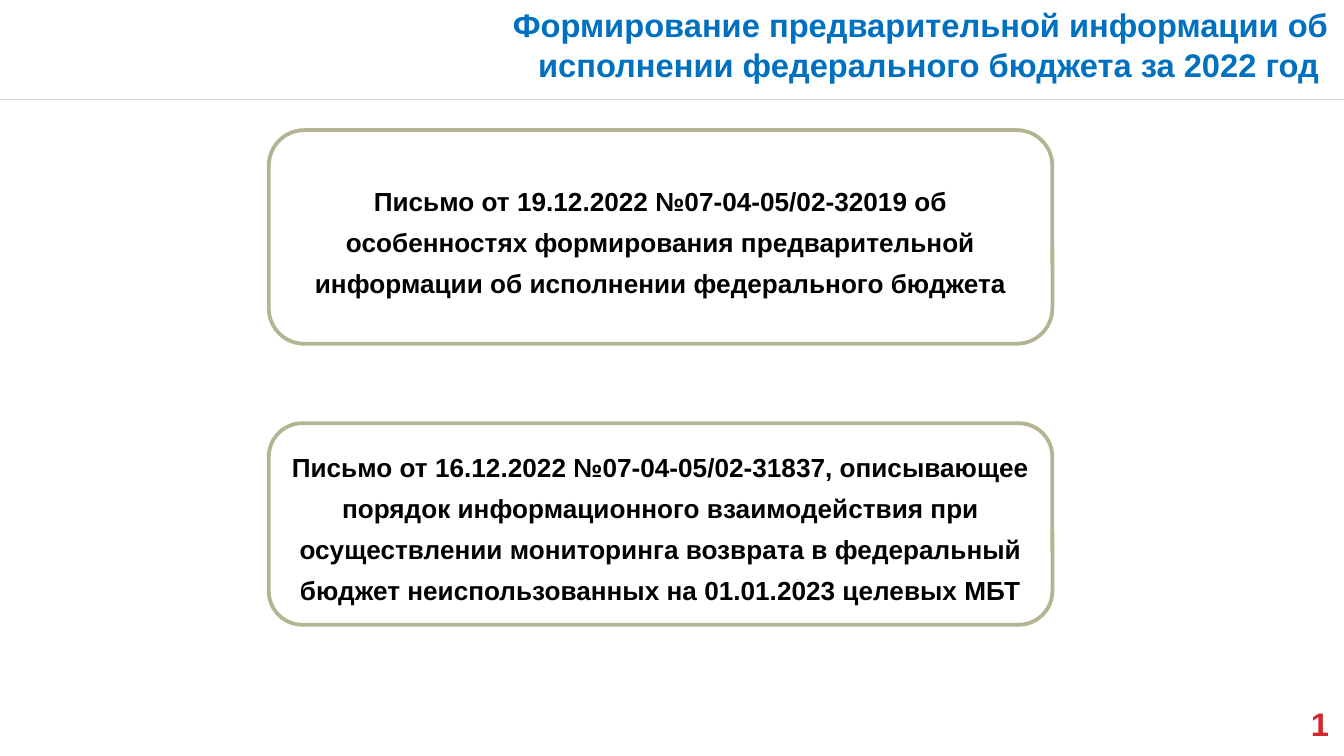
from pptx import Presentation
from pptx.dml.color import RGBColor
from pptx.enum.shapes import MSO_CONNECTOR as CONN, MSO_SHAPE as SHAPE
from pptx.enum.text import MSO_ANCHOR as ANCHOR, PP_ALIGN as ALIGN
from pptx.oxml.ns import qn
from pptx.util import Cm, Pt
from lxml import etree

COLORS = {"title": "0070C0", "number": "D1282E", "text": "000000",
          "rule": "D9D9D9", "border": "B4B392", "box": "FFFFFF"}
WIDTH, HEIGHT = 25.4, 14.29
RIGHT_EDGE = 25.12
BOX_LEFT, BOX_WIDTH = 5.08, 14.81
LETTERS = [
    (2.46, 4.04, "Письмо от 19.12.2022 №07-04-05/02-32019 об особенностях "
     "формирования предварительной информации об исполнении федерального бюджета"),
    (8.0, 3.81, "Письмо от 16.12.2022 №07-04-05/02-31837, описывающее порядок "
     "информационного взаимодействия при осуществлении мониторинга возврата "
     "в федеральный бюджет неиспользованных на 01.01.2023 целевых МБТ"),
]


def color(name):
    return RGBColor.from_string(COLORS[name])


def set_attrs(obj, values):
    for name, value in values.items():
        setattr(obj, name, value)


def write(tf, text, size, color_name, frame, paragraph):
    """Fill a text frame with one bold paragraph."""
    set_attrs(tf, {"word_wrap": True, **frame})
    p = tf.paragraphs[0]
    set_attrs(p, paragraph)
    r = p.add_run()
    r.text = text
    set_attrs(r.font, {"name": "Arial", "size": Pt(size), "bold": True})
    r.font.color.rgb = color(color_name)


def add_right_text(s, top, width, height, text, color_name):
    """Add a text box without margins that ends at the common right edge."""
    tb = s.shapes.add_textbox(Cm(RIGHT_EDGE - width), Cm(top), Cm(width), Cm(height))
    frame = {f"margin_{side}": 0 for side in ("left", "top", "right", "bottom")}
    write(tb.text_frame, text, 17.5, color_name, frame, {"alignment": ALIGN.RIGHT})


def add_rule(s, y):
    line = s.shapes.add_connector(CONN.STRAIGHT, 0, Cm(y), Cm(WIDTH), Cm(y))
    line.line.color.rgb = color("rule")
    line.line.width = Pt(1)
    etree.SubElement(line._element.spPr, qn("a:effectLst"))


def add_letter_box(s, top, height, text):
    sp = s.shapes.add_shape(SHAPE.ROUNDED_RECTANGLE, Cm(BOX_LEFT), Cm(top),
                            Cm(BOX_WIDTH), Cm(height))
    sp.shadow.inherit = False
    sp.fill.solid()
    sp.fill.fore_color.rgb = color("box")
    sp.line.color.rgb = color("border")
    sp.line.width = Pt(2)
    write(sp.text_frame, text, 14, "text", {"vertical_anchor": ANCHOR.MIDDLE},
          {"alignment": ALIGN.CENTER, "line_spacing": Pt(22)})


def main():
    prs = Presentation()
    prs.slide_width, prs.slide_height = Cm(WIDTH), Cm(HEIGHT)
    s = prs.slides.add_slide(prs.slide_layouts[6])
    add_rule(s, 1.88)
    add_right_text(s, 0.1, 18.57, 2.24, "Формирование предварительной информации об "
                   "исполнении федерального бюджета за 2022 год ", "title")
    for top, height, text in LETTERS:
        add_letter_box(s, top, height, text)
    add_right_text(s, 13.31, 5.84, 0.74, "1", "number")
    prs.save("out.pptx")


if __name__ == "__main__":
    main()
